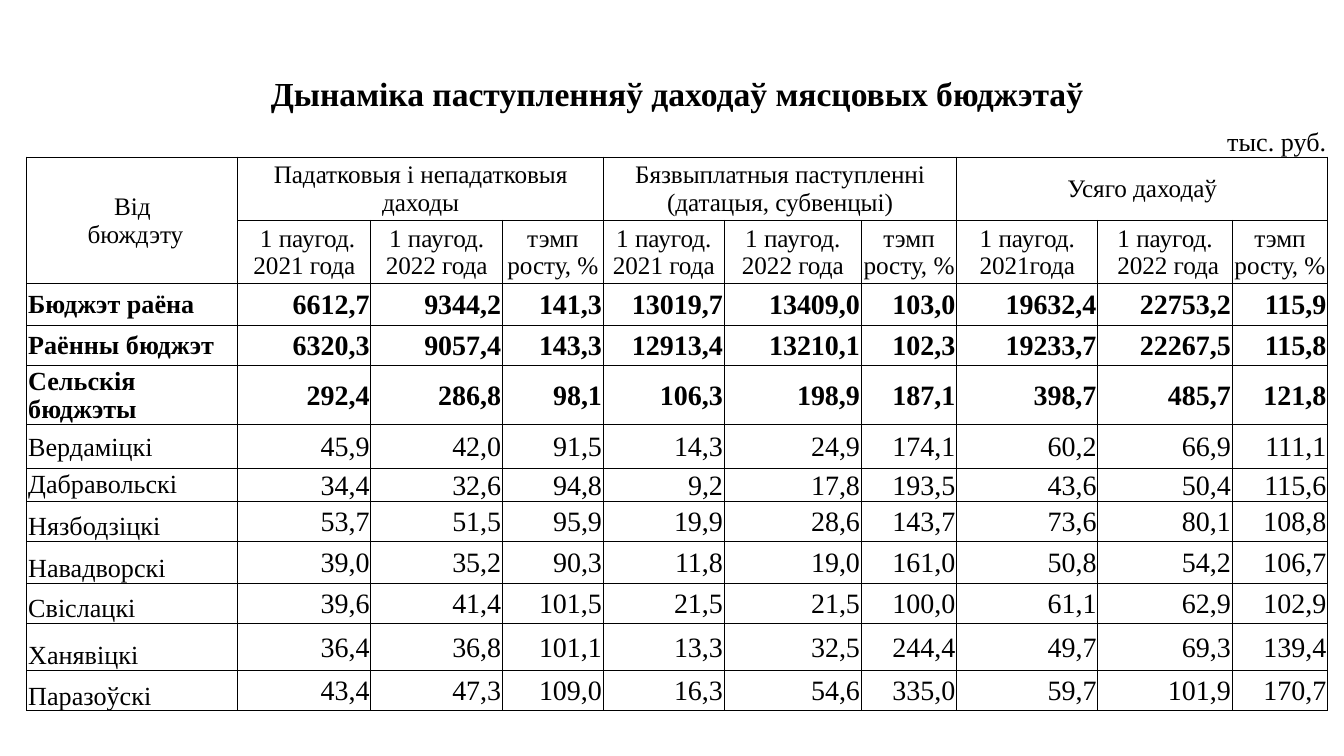
import lxml.etree
import pptx
import pptx.dml.color
import pptx.enum.text
import pptx.oxml.ns
import pptx.util

Inches = pptx.util.Inches
ALIGN = pptx.enum.text.PP_ALIGN
ANCHOR = pptx.enum.text.MSO_ANCHOR

FONT = "Times New Roman"
BLACK = "000000"
COLUMN_WIDTHS = [1.57, 0.99, 0.84, 0.14, 0.75, 0.9, 0.21, 0.81, 0.71, 1.05, 0.85, 0.15, 0.71]
ROW_HEIGHTS = [0.32, 0.32, 0.47, 0.47, 0.31, 0.3, 0.3, 0.33, 0.24, 0.3, 0.31, 0.3, 0.35, 0.3]
VALUE_COLUMNS = [1, 2, 4, 5, 6, 8, 9, 10, 12]
WIDE_COLUMNS = [2, 6, 10]
UNIT_ROW_MERGES = [(1, 2), (3, 6), (7, 8), (11, 12)]

TITLE = "Дынаміка паступленняў даходаў мясцовых бюджэтаў"
UNIT = "тыс. руб."
BUDGET_HEADER = "Вiд\n бюждэту"
INCOME_GROUPS = [
    "Падатковыя і непадатковыя даходы",
    "Бязвыплатныя паступленні (датацыя, субвенцыі)",
    "Усяго даходаў",
]
GROWTH = "тэмп\nросту, %"
PERIODS = [
    " 1 паугод. 2021 года", "1 паугод. 2022 года", GROWTH,
    "1 паугод.\n2021 года", "1 паугод. 2022 года", GROWTH,
    "1 паугод. 2021года", "1 паугод.\n 2022 года", GROWTH,
]
BUDGETS = [
    ("Бюджэт раёна", "6612,7 9344,2 141,3 13019,7 13409,0 103,0 19632,4 22753,2 115,9"),
    ("Раённы бюджэт", "6320,3 9057,4 143,3 12913,4 13210,1 102,3 19233,7 22267,5 115,8"),
    ("Сельскія бюджэты", "292,4 286,8 98,1 106,3 198,9 187,1 398,7 485,7 121,8"),
    ("Вердаміцкі", "45,9 42,0 91,5 14,3 24,9 174,1 60,2 66,9 111,1"),
    ("Дабравольскі", "34,4 32,6 94,8 9,2 17,8 193,5 43,6 50,4 115,6"),
    ("Нязбодзіцкі", "53,7 51,5 95,9 19,9 28,6 143,7 73,6 80,1 108,8"),
    ("Навадворскі", "39,0 35,2 90,3 11,8 19,0 161,0 50,8 54,2 106,7"),
    ("Свіслацкі", "39,6 41,4 101,5 21,5 21,5 100,0 61,1 62,9 102,9"),
    ("Ханявіцкі", "36,4 36,8 101,1 13,3 32,5 244,4 49,7 69,3 139,4"),
    ("Паразоўскі", "43,4 47,3 109,0 16,3 54,6 335,0 59,7 101,9 170,7"),
]
FIRST_BUDGET_ROW = 4
BOLD_BUDGETS = 3


def color(hex_string):
    """Return the colour for a hex string."""
    return pptx.dml.color.RGBColor.from_string(hex_string)


def set_borders(cell, visible_sides):
    """Draw the named sides of a cell as thin black lines and hide the others."""
    properties = cell._tc.get_or_add_tcPr()
    for side in "LRTB":
        line = lxml.etree.SubElement(properties, pptx.oxml.ns.qn(f"a:ln{side}"))
        line.set("w", str(pptx.util.Pt(0.5)))
        if side in visible_sides:
            fill = lxml.etree.SubElement(line, pptx.oxml.ns.qn("a:solidFill"))
            lxml.etree.SubElement(fill, pptx.oxml.ns.qn("a:srgbClr")).set("val", BLACK)
        else:
            lxml.etree.SubElement(line, pptx.oxml.ns.qn("a:noFill"))


def add_budget_table(slide):
    """Add the sized, unfilled table with its borders and cell margins."""
    frame = slide.shapes.add_table(
        len(ROW_HEIGHTS), len(COLUMN_WIDTHS), Inches(0.2), Inches(0.53),
        Inches(sum(COLUMN_WIDTHS)), Inches(sum(ROW_HEIGHTS)))
    table = frame.table
    table.first_row = table.horz_banding = False
    for column, width in zip(table.columns, COLUMN_WIDTHS):
        column.width = Inches(width)
    for index, (row, height) in enumerate(zip(table.rows, ROW_HEIGHTS)):
        row.height = Inches(height)
        for cell in row.cells:
            set_borders(cell, {0: "", 1: "B"}.get(index, "LRTB"))
            cell.fill.background()
            cell.margin_left = cell.margin_right = cell.margin_top = Inches(0.01)
            cell.margin_bottom = 0
    return table


def merge(table, row, first, last, last_row=None):
    """Merge the cells from one column to another, over one or more rows."""
    table.cell(row, first).merge(table.cell(last_row or row, last))


def write(cell, text, size, align, anchor=ANCHOR.MIDDLE, bold=False):
    """Write text into a cell, one paragraph for each line."""
    cell.text = text
    cell.vertical_anchor = anchor
    for paragraph in cell.text_frame.paragraphs:
        paragraph.alignment = align
        paragraph.font.name = FONT
        paragraph.font.size = pptx.util.Pt(size)
        paragraph.font.bold = bold
        paragraph.font.color.rgb = color(BLACK)


def write_headings(table):
    """Fill the title, the unit and the two header rows."""
    merge(table, 0, 0, len(COLUMN_WIDTHS) - 1)
    write(table.cell(0, 0), TITLE, 18, ALIGN.CENTER, ANCHOR.BOTTOM, True)
    for first, last in UNIT_ROW_MERGES:
        merge(table, 1, first, last)
    write(table.cell(1, 11), UNIT, 14, ALIGN.RIGHT, ANCHOR.BOTTOM)
    merge(table, 2, 0, 0, 3)
    write(table.cell(2, 0), BUDGET_HEADER, 13.5, ALIGN.CENTER)
    for first, group in zip(VALUE_COLUMNS[::3], INCOME_GROUPS):
        merge(table, 2, first, first + 3)
        write(table.cell(2, first), group, 13.5, ALIGN.CENTER)
    for column, period in zip(VALUE_COLUMNS, PERIODS):
        write(table.cell(3, column), period, 13.5, ALIGN.CENTER)


def write_budgets(table):
    """Fill one row for each budget."""
    for index, (name, values) in enumerate(BUDGETS):
        row = FIRST_BUDGET_ROW + index
        bold = index < BOLD_BUDGETS
        value_anchor = ANCHOR.TOP if name == "Дабравольскі" else ANCHOR.MIDDLE
        name_anchor = ANCHOR.BOTTOM if index > 4 else value_anchor
        write(table.cell(row, 0), name, 14, ALIGN.LEFT, name_anchor, bold)
        for column, value in zip(VALUE_COLUMNS, values.split()):
            write(table.cell(row, column), value, 15, ALIGN.RIGHT, value_anchor, bold)


def main():
    """Build the slide and save it."""
    presentation = pptx.Presentation()
    presentation.slide_width = Inches(10)
    presentation.slide_height = Inches(10 * 9 / 16)
    slide = presentation.slides.add_slide(presentation.slide_layouts[6])
    table = add_budget_table(slide)
    for row in range(FIRST_BUDGET_ROW - 1, len(ROW_HEIGHTS)):
        for column in WIDE_COLUMNS:
            merge(table, row, column, column + 1)
    write_headings(table)
    write_budgets(table)
    presentation.save("out.pptx")


if __name__ == "__main__":
    main()
